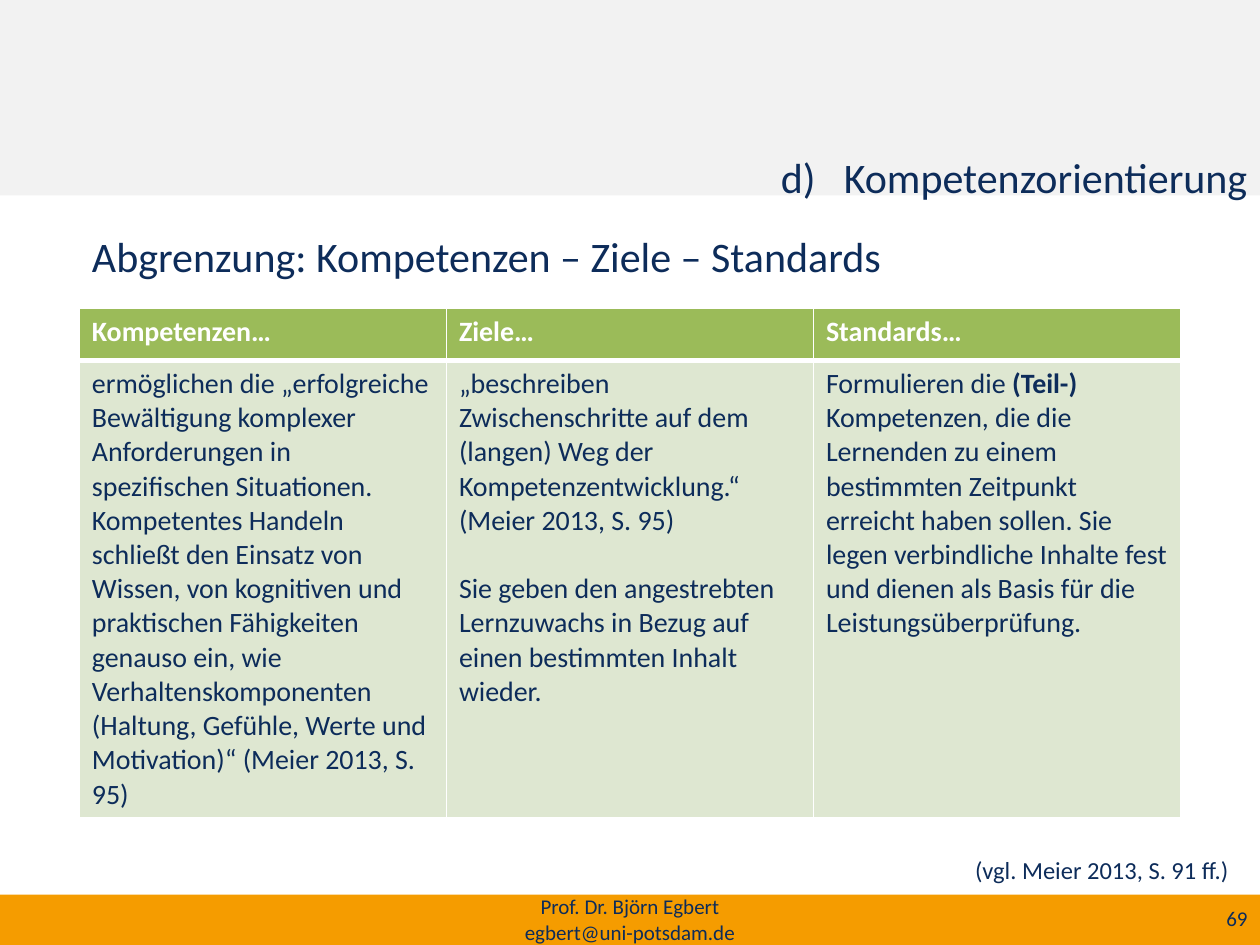
import pptx
import pptx.util
import pptx.dml.color
import pptx.enum.shapes
import pptx.enum.text
import pptx.oxml.ns
from lxml import etree

Inches = pptx.util.Inches
Pt = pptx.util.Pt
ALIGN = pptx.enum.text.PP_ALIGN
ANCHOR = pptx.enum.text.MSO_ANCHOR
qn = pptx.oxml.ns.qn
NAVY, ORANGE, GREY, WHITE = "0D2C5A", "F59C00", "F2F2F2", "FFFFFF"
GREEN, PALE_GREEN = "9BBB59", "DEE7D1"

HEADERS = ["Kompetenzen…", "Ziele…", "Standards…"]
BODIES = [
    [["ermöglichen die „erfolgreiche Bewältigung komplexer Anforderungen in "
      "spezifischen Situationen. Kompetentes Handeln schließt den Einsatz von "
      "Wissen, von kognitiven und praktischen Fähigkeiten genauso ein, wie "
      "Verhaltenskomponenten (Haltung, Gefühle, Werte und Motivation)“ "
      "(Meier 2013, S. 95)"]],
    [["„beschreiben Zwischenschritte auf dem (langen) Weg der "
      "Kompetenzentwicklung.“"],
     ["(Meier 2013, S. 95)"],
     ["Sie geben den angestrebten Lernzuwachs in Bezug auf einen bestimmten "
      "Inhalt wieder."]],
    [["Formulieren die ", "(Teil-) ",
      "Kompetenzen, die die Lernenden zu einem bestimmten Zeitpunkt erreicht "
      "haben sollen. Sie legen verbindliche Inhalte fest und dienen als Basis "
      "für die Leistungsüberprüfung."]],
]


def rgb(color):
    return pptx.dml.color.RGBColor.from_string(color)


def write(p, text, size=16, color=NAVY, bold=False, align=ALIGN.LEFT, before=0):
    p.alignment = align
    p.space_before = Pt(before)
    r = p.add_run()
    r.text = text
    r.font.name = "Calibri"
    r.font.size = Pt(size)
    r.font.bold = bold
    r.font.color.rgb = rgb(color)


def add_band(s, top, height, color):
    sp = s.shapes.add_shape(pptx.enum.shapes.MSO_SHAPE.RECTANGLE,
                            0, Inches(top), Inches(10), Inches(height))
    sp.shadow.inherit = False
    sp.fill.solid()
    sp.fill.fore_color.rgb = rgb(color)
    sp.line.fill.background()
    s.shapes._spTree.insert(2, sp._element)


def add_text(s, box, lines, anchor=ANCHOR.TOP, **fmt):
    sp = s.shapes.add_textbox(*map(Inches, box))
    tf = sp.text_frame
    tf.word_wrap = True
    tf.vertical_anchor = anchor
    for i, line in enumerate(lines):
        write(tf.add_paragraph() if i else tf.paragraphs[0], line, **fmt)


def fill_placeholder(sp, box, text, bullet, **fmt):
    sp.left, sp.top, sp.width, sp.height = map(Inches, box)
    tf = sp.text_frame
    tf.word_wrap = True
    tf.auto_size = pptx.enum.text.MSO_AUTO_SIZE.NONE
    tf.vertical_anchor = ANCHOR.TOP
    p = tf.paragraphs[0]
    pPr = p._p.get_or_add_pPr()
    indent = Inches(0.5) if bullet else 0
    pPr.set("marL", str(indent))
    pPr.set("indent", str(-indent))
    if bullet:
        etree.SubElement(pPr, qn("a:buAutoNum"), type="alphaLcParenR", startAt="4")
    else:
        etree.SubElement(pPr, qn("a:buNone"))
    write(p, text, size=24, **fmt)


def style_cell(cell, fill, top, bottom):
    tcPr = cell._tc.get_or_add_tcPr()
    for side, width in (("L", 1), ("R", 1), ("T", top), ("B", bottom)):
        ln = etree.SubElement(tcPr, qn("a:ln" + side), w=str(Pt(width)))
        color = etree.SubElement(etree.SubElement(ln, qn("a:solidFill")), qn("a:srgbClr"))
        color.set("val", WHITE)
    cell.fill.solid()
    cell.fill.fore_color.rgb = rgb(fill)


def add_comparison(s):
    table = s.shapes.add_table(2, 3, Inches(0.63), Inches(2.45),
                               Inches(8.74), Inches(3.97)).table
    table.rows[0].height = Inches(0.41)
    table.rows[1].height = Inches(3.56)
    for col, (header, body) in enumerate(zip(HEADERS, BODIES)):
        head, cell = table.cell(0, col), table.cell(1, col)
        style_cell(head, GREEN, 1, 3)
        style_cell(cell, PALE_GREEN, 3, 1)
        write(head.text_frame.paragraphs[0], header, color=WHITE, bold=True)
        tf = cell.text_frame
        for i, runs in enumerate(body):
            p = tf.add_paragraph() if i else tf.paragraphs[0]
            for j, text in enumerate(runs):
                write(p, text, bold=j == 1, before=19.5 if i == 2 else 0)


def main():
    prs = pptx.Presentation()
    prs.slide_width, prs.slide_height = Inches(10), Inches(7.5)
    s = prs.slides.add_slide(prs.slide_layouts[1])
    add_band(s, 0, 1.55, GREY)
    add_band(s, 7.1, 0.4, ORANGE)
    fill_placeholder(s.shapes.title, (1.38, 1.15, 8.62, 0.63),
                     "Kompetenzorientierung", True, align=ALIGN.RIGHT)
    fill_placeholder(s.placeholders[1], (0.63, 1.78, 8.62, 0.63),
                     "Abgrenzung: Kompetenzen – Ziele – Standards", False)
    add_comparison(s)
    add_text(s, (7.64, 6.74, 2.4, 0.34), ["(vgl. Meier 2013, S. 91 ff.)"], size=14)
    add_text(s, (3.31, 7.09, 3.38, 0.41),
             ["Prof. Dr. Björn Egbert", "egbert@uni-potsdam.de"],
             anchor=ANCHOR.MIDDLE, size=12, align=ALIGN.CENTER)
    add_text(s, (7.6, 7.09, 2.4, 0.4), ["69"],
             anchor=ANCHOR.MIDDLE, size=12, align=ALIGN.RIGHT)
    prs.save("out.pptx")


if __name__ == "__main__":
    main()
